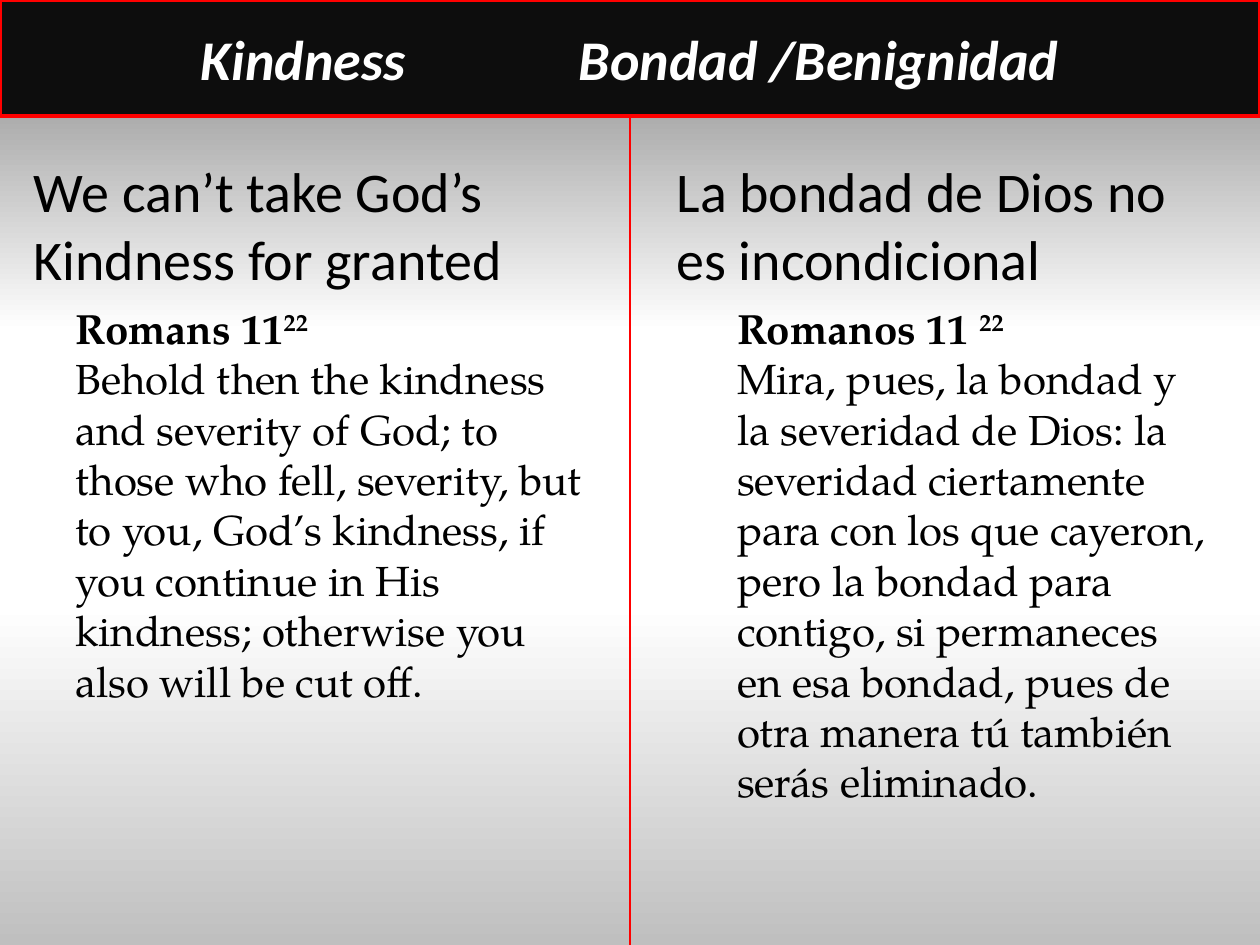
from lxml import etree
from pptx import Presentation
from pptx import util as u
from pptx.dml import color
from pptx.enum import shapes, text
from pptx.oxml import ns

BLACK = color.RGBColor(0x00, 0x00, 0x00)
WHITE = color.RGBColor(0xFF, 0xFF, 0xFF)
RED = color.RGBColor(0xFF, 0x00, 0x00)
HEADER_BLACK = color.RGBColor(0x0D, 0x0D, 0x0D)
SILVER = color.RGBColor(0xBF, 0xBF, 0xBF)
GRAY = color.RGBColor(0x80, 0x80, 0x80)

SLIDE_WIDTH, SLIDE_HEIGHT = u.Cm(25.4), u.Cm(19.05)
HEADER_HEIGHT = u.Cm(2.34)
BACKGROUND_STOPS = [(0, SILVER), (36, WHITE), (65, WHITE), (100, GRAY)]

TITLE = {"name": "Calibri", "size": u.Pt(32), "bold": True, "italic": True}
STATEMENT = {"name": "Calibri", "size": u.Pt(32)}
VERSE = {"name": "TeX Gyre Pagella", "size": u.Pt(24), "bold": False}
REFERENCE = {**VERSE, "bold": True}

COLUMNS = [
    {
        "statement": "We can’t take God’s Kindness for granted",
        "reference": "Romans 11",
        "verse": "Behold then the kindness and severity of God; to those who fell, "
                 "severity, but to you, God’s kindness, if you continue in His "
                 "kindness; otherwise you also will be cut off.",
        "statement_indent": u.Cm(0.43),
        "verse_indent": u.Cm(1.27),
        "right_edge": u.Cm(12.07),
        "verse_height": u.Cm(8.43),
    },
    {
        "statement": "La bondad de Dios no es incondicional",
        "reference": "Romanos 11 ",
        "verse": "Mira, pues, la bondad y la severidad de Dios: la severidad "
                 "ciertamente para con los que cayeron, pero la bondad para contigo, "
                 "si permaneces en esa bondad, pues de otra manera tú también serás "
                 "eliminado.",
        "statement_indent": u.Cm(0.69),
        "verse_indent": u.Cm(1.91),
        "right_edge": u.Cm(11.97),
        "verse_height": u.Cm(10.52),
    },
]


def add_run(paragraph, words, font_format, font_color=BLACK):
    run = paragraph.add_run()
    run.text = words
    for attribute, value in font_format.items():
        setattr(run.font, attribute, value)
    run.font.color.rgb = font_color
    return run


def add_text_box(slide, left, top, width, height):
    frame = slide.shapes.add_textbox(left, top, width, height).text_frame
    frame.word_wrap = True
    frame.auto_size = text.MSO_AUTO_SIZE.SHAPE_TO_FIT_TEXT
    return frame


def paint_background(slide):
    fill = slide.background.fill
    fill.gradient()
    fill.gradient_angle = 90
    stop_list = slide.background._cSld.find(".//" + ns.qn("a:gsLst"))
    for stop in list(stop_list):
        stop_list.remove(stop)
    for percent, stop_color in BACKGROUND_STOPS:
        stop = etree.SubElement(stop_list, ns.qn("a:gs"), pos=str(percent * 1000))
        etree.SubElement(stop, ns.qn("a:srgbClr"), val=str(stop_color))


def place_header(slide, left, top, width, height):
    title = slide.shapes.title
    box = {"left": left, "top": top, "width": width, "height": height}
    for attribute, value in box.items():
        setattr(title, attribute, value)
    title.fill.solid()
    title.fill.fore_color.rgb = HEADER_BLACK
    title.line.color.rgb = RED
    title.line.width = u.Pt(2)
    frame = title.text_frame
    frame.auto_size = text.MSO_AUTO_SIZE.NONE
    frame.vertical_anchor = text.MSO_ANCHOR.MIDDLE
    paragraph = frame.paragraphs[0]
    paragraph.alignment = text.PP_ALIGN.CENTER
    add_run(paragraph, "Kindness\t\t\tBondad /Benignidad", TITLE, WHITE)


def place_divider(slide, left, top, height):
    line = slide.shapes.add_connector(
        shapes.MSO_CONNECTOR.STRAIGHT, left, top, left, top + height)
    line.line.color.rgb = RED
    line.line.width = u.Pt(0.75)
    etree.SubElement(line._element.spPr, ns.qn("a:effectLst"))


def place_column(slide, left, top, column):
    indent = column["statement_indent"]
    frame = add_text_box(slide, left + indent, top + u.Cm(0.7),
                         column["right_edge"] - indent, u.Cm(3))
    add_run(frame.paragraphs[0], column["statement"], STATEMENT)

    indent = column["verse_indent"]
    frame = add_text_box(slide, left + indent, top + u.Cm(3.63),
                         column["right_edge"] - indent, column["verse_height"])
    heading = frame.paragraphs[0]
    add_run(heading, column["reference"], REFERENCE)
    number = add_run(heading, "22", REFERENCE)
    number._r.get_or_add_rPr().set("baseline", "30000")
    add_run(frame.add_paragraph(), column["verse"], VERSE)


def main():
    presentation = Presentation()
    presentation.slide_width = SLIDE_WIDTH
    presentation.slide_height = SLIDE_HEIGHT
    slide = presentation.slides.add_slide(presentation.slide_layouts[5])
    paint_background(slide)
    column_width = SLIDE_WIDTH // len(COLUMNS)
    place_divider(slide, column_width, HEADER_HEIGHT, SLIDE_HEIGHT - HEADER_HEIGHT)
    for index, column in enumerate(COLUMNS):
        place_column(slide, index * column_width, HEADER_HEIGHT, column)
    place_header(slide, 0, 0, SLIDE_WIDTH, HEADER_HEIGHT)
    presentation.save("out.pptx")


if __name__ == "__main__":
    main()
